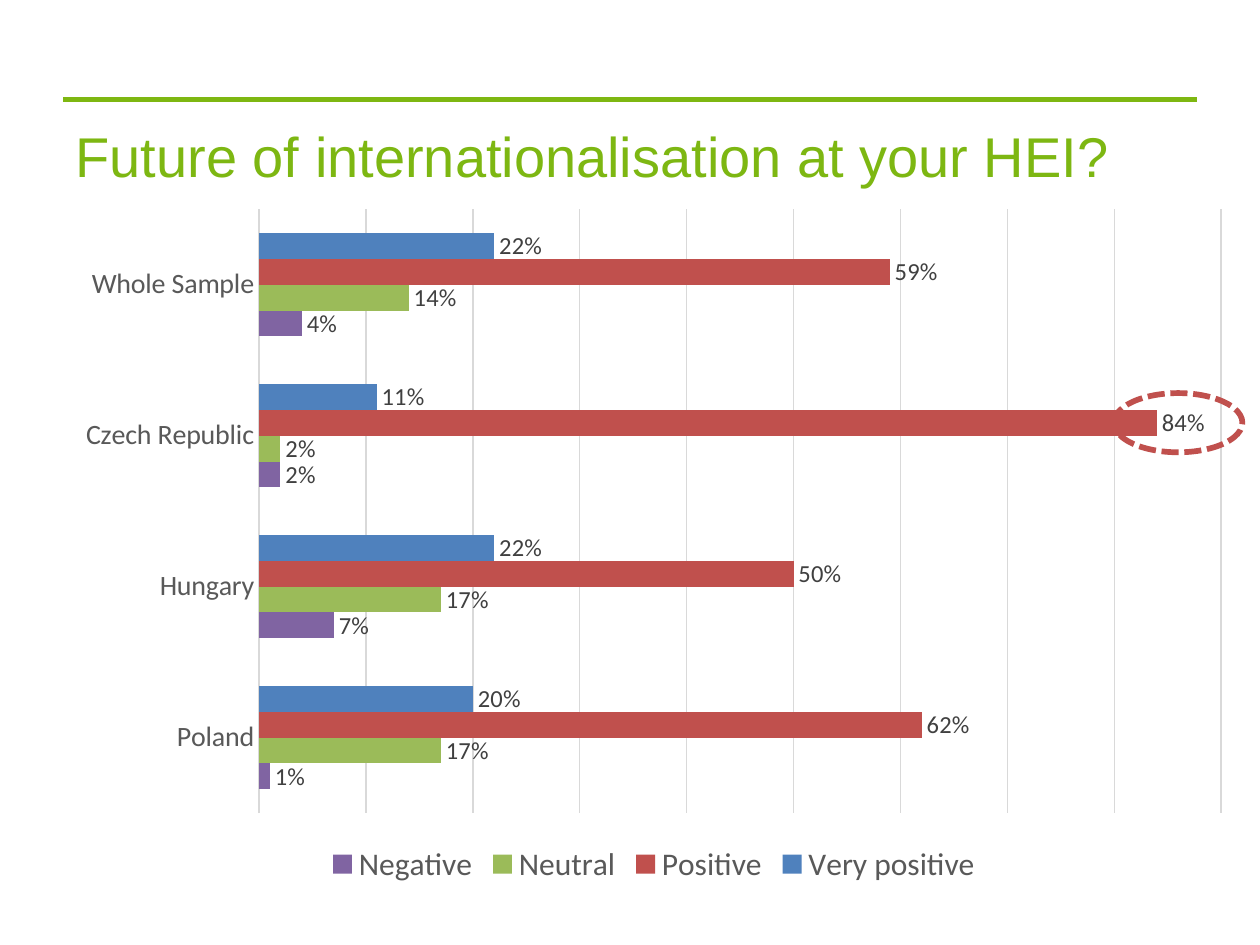
from lxml import etree
from pptx import Presentation
from pptx.chart.data import CategoryChartData
from pptx.dml.color import RGBColor
from pptx.enum.chart import XL_CHART_TYPE as CT, XL_LABEL_POSITION as LP
from pptx.enum.chart import XL_LEGEND_POSITION as LEG, XL_TICK_MARK as TM
from pptx.enum.dml import MSO_LINE
from pptx.enum.shapes import MSO_CONNECTOR, MSO_SHAPE
from pptx.enum.text import MSO_ANCHOR, PP_ALIGN
from pptx.oxml import parse_xml
from pptx.oxml.ns import nsdecls, qn
from pptx.util import Inches, Pt


def rgb(value):
    return RGBColor.from_string(value)


def set_font(font, name, size, color):
    font.name = name
    font.size = Pt(size)
    font.color.rgb = rgb(color)


prs = Presentation()
prs.slide_width, prs.slide_height = Inches(10), Inches(7.5)
s = prs.slides.add_slide(prs.slide_layouts[5])

rule = s.shapes.add_connector(MSO_CONNECTOR.STRAIGHT, Inches(0.5), Inches(0.79), Inches(9.5), Inches(0.79))
rule.line.color.rgb = rgb("7EB711")
rule.line.width = Pt(2.75)
etree.SubElement(rule._element.spPr, qn("a:effectLst"))

title = s.shapes.title
title.left, title.top, title.width, title.height = Inches(0.5), Inches(0.92), Inches(9), Inches(0.63)
tf = title.text_frame
tf.vertical_anchor = MSO_ANCHOR.MIDDLE
p = tf.paragraphs[0]
p.text = "Future of internationalisation at your HEI?"
p.alignment = PP_ALIGN.LEFT
set_font(p.font, "Arial", 32, "7DB712")

series = [
    ("Very positive", (0.22, 0.11, 0.22, 0.20), "4F81BD"),
    ("Positive", (0.59, 0.84, 0.50, 0.62), "C0504D"),
    ("Neutral", (0.14, 0.02, 0.17, 0.17), "9BBB59"),
    ("Negative", (0.04, 0.02, 0.07, 0.01), "8064A2"),
]
data = CategoryChartData(number_format="0%")
data.categories = ["Whole Sample", "Czech Republic", "Hungary", "Poland"]
for name, values, color in series:
    data.add_series(name, values)
chart = s.shapes.add_chart(
    CT.BAR_CLUSTERED, Inches(0.5), Inches(1.55), Inches(9.38), Inches(5.51), data
).chart
set_font(chart.font, "Calibri", 10, "000000")
chart.has_title = False

plot = chart.plots[0]
plot.gap_width = 182
plot.overlap = 0
plot.vary_by_categories = False
for ser, (name, values, color) in zip(plot.series, series):
    ser.format.fill.solid()
    ser.format.fill.fore_color.rgb = rgb(color)
    ser.invert_if_negative = False
    labels = ser.data_labels
    labels.show_value = True
    labels.number_format = "0%"
    labels.number_format_is_linked = False
    labels.position = LP.OUTSIDE_END
    set_font(labels.font, "Calibri", 14, "404040")

cat = chart.category_axis
cat.reverse_order = True
cat.major_tick_mark = TM.NONE
cat.format.line.color.rgb = rgb("D9D9D9")
cat.format.line.width = Pt(0.75)
set_font(cat.tick_labels.font, "Calibri", 16, "595959")

val = chart.value_axis
val.visible = False
val.minimum_scale, val.maximum_scale, val.major_unit = 0, 0.9, 0.1
val.tick_labels.number_format = "0%"
val.tick_labels.number_format_is_linked = False
val.has_major_gridlines = True
val.major_gridlines.format.line.color.rgb = rgb("D9D9D9")
val.major_gridlines.format.line.width = Pt(0.75)

chart.has_legend = True
chart.legend.position = LEG.BOTTOM
chart.legend.include_in_layout = False
set_font(chart.legend.font, "Calibri", 18, "595959")

area = chart._chartSpace.chart.plotArea
for old in area.findall(qn("c:layout")):
    area.remove(old)
area.insert(0, parse_xml(
    f'<c:layout {nsdecls("c")}><c:manualLayout><c:layoutTarget val="inner"/>'
    '<c:xMode val="edge"/><c:yMode val="edge"/>'
    '<c:x val="0.166"/><c:y val="0.02"/><c:w val="0.814"/><c:h val="0.87"/>'
    '</c:manualLayout></c:layout>'
))

sp = s.shapes.add_shape(MSO_SHAPE.OVAL, Inches(8.84), Inches(3.12), Inches(1.02), Inches(0.47))
sp.shadow.inherit = False
sp.fill.background()
sp.line.color.rgb = rgb("C0504D")
sp.line.width = Pt(3.25)
sp.line.dash_style = MSO_LINE.SQUARE_DOT

prs.save("out.pptx")
